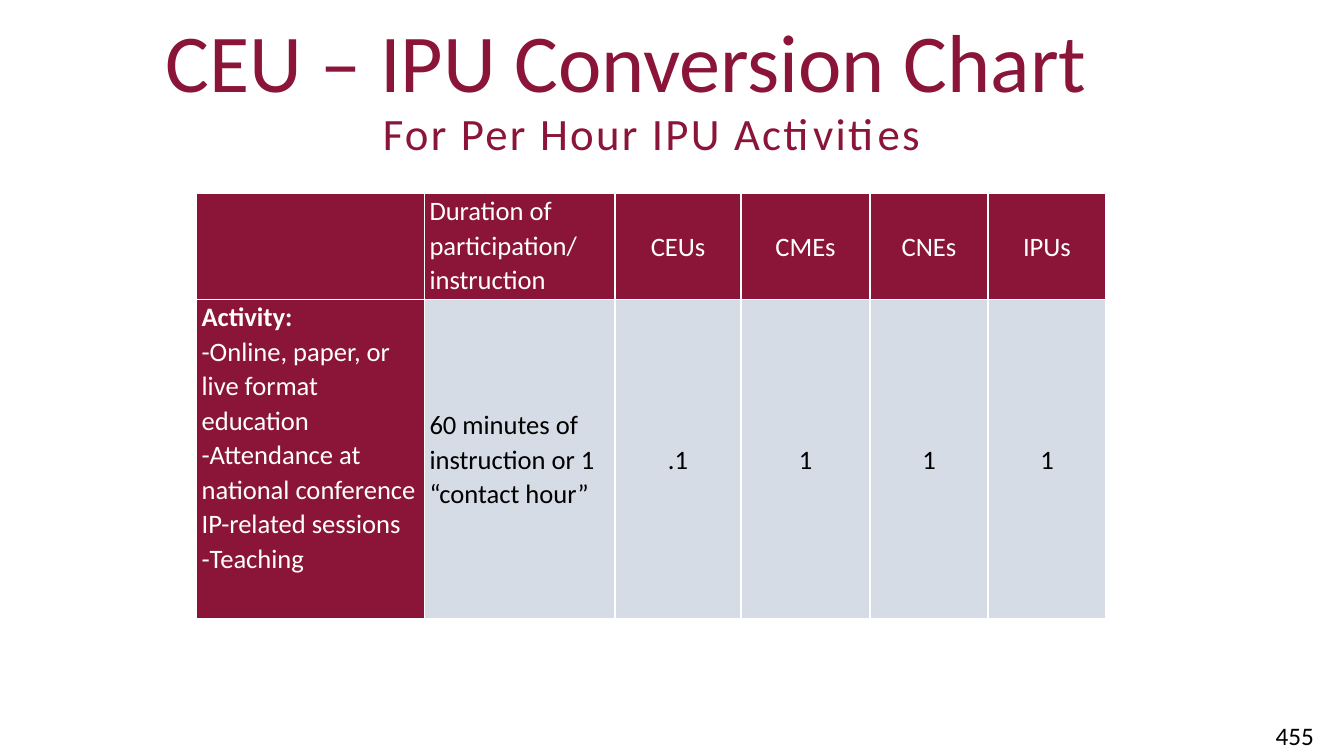
from dataclasses import dataclass
from lxml.etree import SubElement
from pptx import Presentation
from pptx.dml.color import RGBColor as RGB
from pptx.enum.text import MSO_ANCHOR as Anchor, MSO_AUTO_SIZE as Fit, PP_ALIGN as Align
from pptx.oxml.ns import qn
from pptx.util import Inches, Pt


@dataclass(frozen=True)
class Theme:
    face: str = "Calibri"
    wine: RGB = RGB(0x8A, 0x15, 0x38)
    pale: RGB = RGB(0xD6, 0xDC, 0xE5)
    white: RGB = RGB(255, 255, 255)
    black: RGB = RGB(0, 0, 0)
    title: float = 58.7
    sub: float = 32
    body: float = 19
    page: float = 18


TITLE = "CEU – IPU Conversion Chart "
SUB = "For Per Hour IPU Activities"
PAGE = "455"
ROWS = [
    ["", "Duration of participation/\vinstruction", "CEUs", "CMEs", "CNEs", "IPUs"],
    ["Activity:\n-Online, paper, or live format education\n"
     "-Attendance at national conference IP-related sessions\n-Teaching",
     "60 minutes of instruction or 1 “contact hour”", ".1", "1", "1", "1"],
]
WIDTHS = [2.26, 1.89, 1.25, 1.28, 1.17, 1.17]
HEIGHTS = [1.05, 3.17]
theme = Theme()


def style(para, size, color, align, gap=None, bold=False):
    para.alignment = align
    para.line_spacing = gap
    font = para.font
    font.name, font.size, font.bold = theme.face, Pt(size), bold
    font.color.rgb = color


def place(shape, box, text, size, color, align, gap=None):
    shape.left, shape.top, shape.width, shape.height = map(Inches, box)
    frame = shape.text_frame
    frame.word_wrap = True
    frame.text = text
    style(frame.paragraphs[0], size, color, align, gap)
    return frame


def head(shape, box, text, size, gap):
    frame = place(shape, box, text, size, theme.wine, Align.CENTER, Pt(gap))
    frame.margin_left = frame.margin_top = frame.margin_right = frame.margin_bottom = 0
    frame.vertical_anchor = Anchor.TOP
    frame.auto_size = Fit.SHAPE_TO_FIT_TEXT


def edge(cell):
    props = cell._tc.get_or_add_tcPr()
    for i, side in enumerate(("lnL", "lnR", "lnT", "lnB")):
        line = props.makeelement(qn("a:" + side), {"w": str(Pt(1))})
        fill = SubElement(line, qn("a:solidFill"))
        SubElement(fill, qn("a:srgbClr"), val=str(theme.white))
        props.insert(i, line)


def fill_cell(cell, text, row, col):
    dark = row == 0 or col == 0
    cell.fill.solid()
    cell.fill.fore_color.rgb = theme.wine if dark else theme.pale
    cell.margin_left = cell.margin_right = Inches(0.05)
    cell.margin_top = cell.margin_bottom = 0
    top = col == 0 or (row == 0 and col == 1)
    cell.vertical_anchor = Anchor.TOP if top else Anchor.MIDDLE
    cell.text = text
    for i, para in enumerate(cell.text_frame.paragraphs):
        style(para, theme.body, theme.white if dark else theme.black,
              Align.CENTER if col > 1 else Align.LEFT, 1.07,
              row == 1 and col == 0 and i == 0)
    edge(cell)


def main():
    deck = Presentation()
    deck.slide_width, deck.slide_height = Inches(13.33), Inches(7.5)
    slide = deck.slides.add_slide(deck.slide_layouts[5])
    shapes = slide.shapes

    head(shapes.title, (-1.56, 0.1, 15.72, 0.98), TITLE, theme.title, 70.4)

    grid = shapes.add_table(len(ROWS), len(WIDTHS), Inches(1.95), Inches(1.92),
                            Inches(sum(WIDTHS)), Inches(sum(HEIGHTS))).table
    grid.horz_banding = False
    for col, width in zip(grid.columns, WIDTHS):
        col.width = Inches(width)
    for row, height in zip(grid.rows, HEIGHTS):
        row.height = Inches(height)
    for r, row in enumerate(ROWS):
        for c, text in enumerate(row):
            fill_cell(grid.cell(r, c), text, r, c)

    sub = shapes.add_textbox(0, 0, 0, 0)
    head(sub, (3.06, 1.09, 6.81, 0.49), SUB, theme.sub, 35.2)
    run = sub.text_frame.paragraphs[0].runs[0]
    run._r.get_or_add_rPr().set("spc", "160")

    page = place(shapes.add_textbox(0, 0, 0, 0), (10.13, 7.1, 3, 0.4),
                 PAGE, theme.page, theme.black, Align.RIGHT)
    page.vertical_anchor = Anchor.MIDDLE
    deck.save("out.pptx")


if __name__ == "__main__":
    main()
